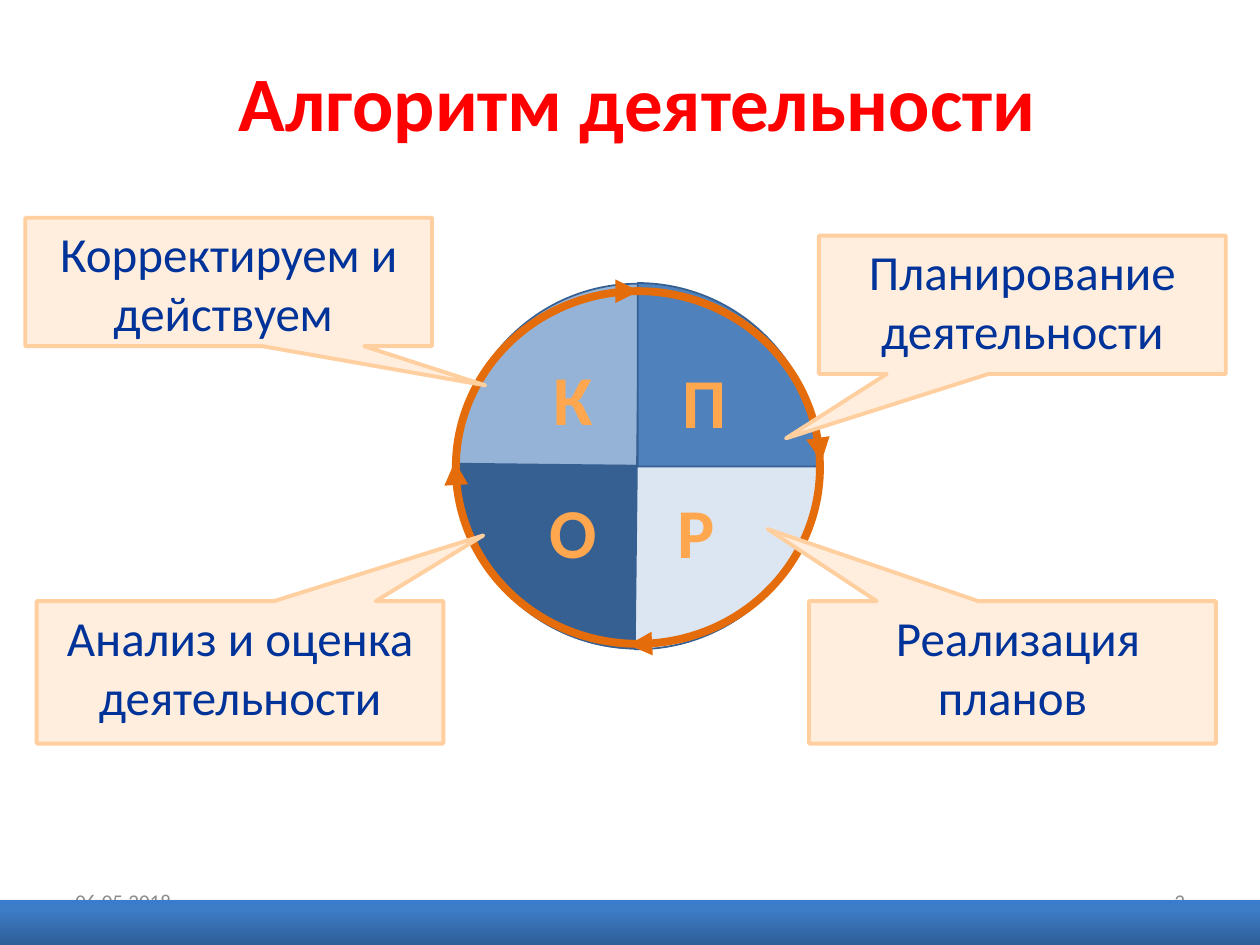
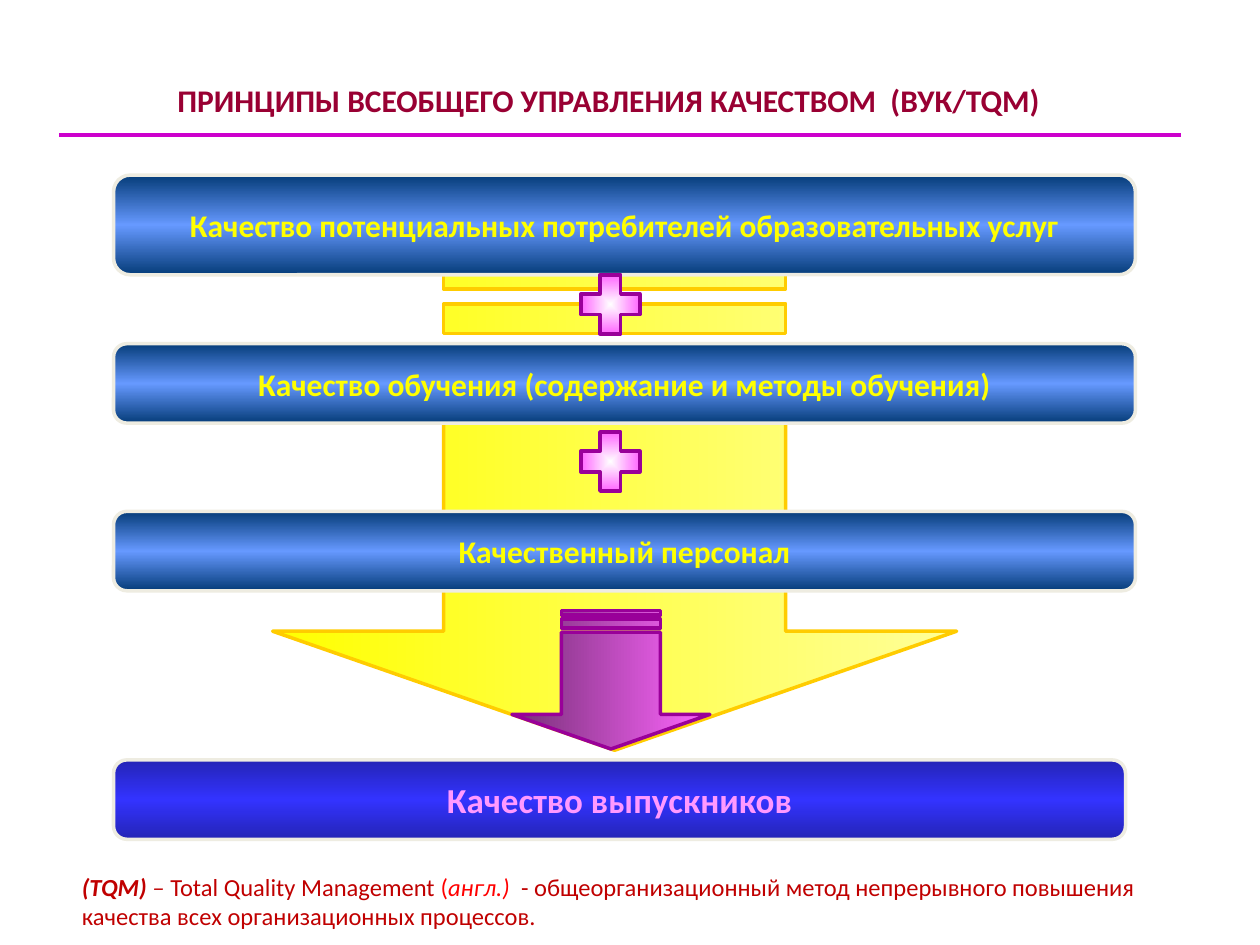
from lxml import etree
from pptx import Presentation, util as u
from pptx.dml.color import RGBColor
from pptx.enum import shapes, text
from pptx.oxml.ns import qn

Cm, Pt = u.Cm, u.Pt
MSO = shapes.MSO_SHAPE
ANCHOR, ALIGN = text.MSO_ANCHOR, text.PP_ALIGN

FONT = "Calibri"
GREY = "8C8C8C"
PIE_LINE, RING = "376092", "E46C0A"
LETTER = "FFA74F"
CALLOUT_FILL, CALLOUT_LINE, CALLOUT_TEXT = "FFEEDD", "FFCF9F", "003399"
BAND_LINE, PURPLE, GOLD = "EEECE1", "990099", "FFCC00"
DARK_RED, RED = "C00000", "FF0000"
BLUE_STOPS = [(0, "053C79"), (50, "6699FF"), (100, "053C79")]
INDIGO_STOPS = [(0, "2424B6"), (50, "3333FF"), (100, "2424B6")]
FOOTER_STOPS = [(0, "2F5F99"), (80, "3D7CC7"), (100, "3A7CCB")]


def color(code):
    return RGBColor.from_string(code)


def sub(parent, tag, **attrs):
    el = etree.SubElement(parent, qn(tag))
    for name, value in attrs.items():
        el.set(name, str(value))
    return el


def gradient(sp, stops, angle=None):
    sp.fill.background()
    props = sp._element.spPr
    old = props.find(qn("a:noFill"))
    grad = etree.Element(qn("a:gradFill"), rotWithShape="1")
    gs_list = sub(grad, "a:gsLst")
    for pos, code in stops:
        sub(sub(gs_list, "a:gs", pos=pos * 1000), "a:srgbClr", val=code)
    if angle is None:
        center = sub(grad, "a:path", path="shape")
        sub(center, "a:fillToRect", l=50000, t=50000, r=50000, b=50000)
    else:
        sub(grad, "a:lin", ang=angle * 60000, scaled=0)
    props.replace(old, grad)


def outline(sp, code, width):
    sp.line.color.rgb = color(code)
    sp.line.width = Pt(width)


def write(sp, runs, size, code, align=ALIGN.LEFT, anchor=ANCHOR.TOP,
          bold=False, wrap=True, after=0):
    tf = sp.text_frame
    tf.word_wrap = wrap
    tf.vertical_anchor = anchor
    p = tf.paragraphs[0]
    p.alignment = align
    p.space_after = Pt(after)
    for words, style in runs:
        r = p.add_run()
        r.text = words
        r.font.name = FONT
        r.font.size = Pt(size)
        r.font.bold = style.get("bold", bold)
        r.font.italic = style.get("italic", False)
        r.font.color.rgb = color(style.get("code", code))
    return tf


def add_text(s, box, words, size, code, **style):
    sp = s.shapes.add_textbox(*map(Cm, box))
    runs = [(words, {})] if isinstance(words, str) else words
    return write(sp, runs, size, code, **style)


def add_shape(s, kind, box, fill=None, line=None, width=1, adj=(), rot=0, angle=None):
    sp = s.shapes.add_shape(kind, *map(Cm, box))
    sp.shadow.inherit = False
    sp.rotation = rot
    for i, value in enumerate(adj):
        sp.adjustments[i] = value
    if isinstance(fill, list):
        gradient(sp, fill, angle)
    elif fill:
        sp.fill.solid()
        sp.fill.fore_color.rgb = color(fill)
    else:
        sp.fill.background()
    if line:
        outline(sp, line, width)
    else:
        sp.line.fill.background()
    return sp


def add_line(s, ends, code, width, arrow=False):
    c = s.shapes.add_connector(shapes.MSO_CONNECTOR.STRAIGHT, *map(Cm, ends))
    outline(c, code, width)
    if arrow:
        sub(c.line._get_or_add_ln(), "a:tailEnd", type="triangle")
    sub(c._element.spPr, "a:effectLst")


def add_callout(s, box, adj, words):
    sp = add_shape(s, MSO.RECTANGULAR_CALLOUT, box, CALLOUT_FILL, CALLOUT_LINE, 2.25, adj)
    write(sp, [(words, {})], 28, CALLOUT_TEXT, align=ALIGN.CENTER, after=10)


def add_band(s, box, words, stops=BLUE_STOPS, size=18, code="FFFF00"):
    sp = add_shape(s, MSO.ROUNDED_RECTANGLE, box, stops, BAND_LINE, 2, angle=90)
    write(sp, [(words, {})], size, code, align=ALIGN.CENTER,
          anchor=ANCHOR.MIDDLE, bold=True, wrap=False)


def add_down_arrow(s, box, stops, line):
    add_shape(s, MSO.STRIPED_RIGHT_ARROW, box, stops, line, 2, (0.5, 0.25), 90, 90)


def add_plus(s, top):
    add_shape(s, MSO.CROSS, (11.71, top, 1.19, 1.19),
              [(0, "FFFFFF"), (100, "FF66FF")], PURPLE, 2, (0.325,))


def add_footer(s, date, number):
    for left, words, align in ((1.27, date, ALIGN.LEFT), (18.21, number, ALIGN.RIGHT)):
        add_text(s, (left, 17.65, 5.93, 1.02), words, 12, GREY,
                 align=align, anchor=ANCHOR.MIDDLE)


def add_footer_bar(s):
    bar = add_shape(s, MSO.RECTANGLE, (0, 18.14, 25.4, 0.91), FOOTER_STOPS, angle=270)
    effects = bar._element.spPr.find(qn("a:effectLst"))
    shadow = sub(effects, "a:outerShdw", blurRad=Pt(3.1), dist=Pt(1.8),
                 dir=90 * 60000, rotWithShape=0)
    sub(sub(shadow, "a:srgbClr", val="000000"), "a:alpha", val=35000)


def cycle_slide(s):
    add_text(s, (2.06, 0.74, 21.59, 2.57), "Алгоритм деятельности", 44, RED,
             align=ALIGN.CENTER, anchor=ANCHOR.MIDDLE, bold=True)
    add_footer(s, "06.05.2018", "3")

    quarter = (0, 54.395)
    for rot, w, h, fill, adj in (
        (180, 7.34, 7.57, "95B3D7", quarter),
        (270, 7.37, 7.34, "4F81BD", ()),
        (90, 7.37, 7.34, "376092", quarter),
        (0, 7.34, 7.37, "DCE6F2", quarter),
    ):
        add_shape(s, MSO.PIE, (9.17, 5.72, w, h), fill, PIE_LINE, 1, adj, rot)

    add_shape(s, MSO.OVAL, (9.19, 5.87, 7.34, 7.11), line=RING, width=4.5)
    for ends in (
        (16.51, 8.97, 16.56, 9.3),
        (9.19, 9.65, 9.17, 9.3),
        (12.55, 5.87, 12.88, 5.87),
        (13.03, 12.98, 12.67, 13),
    ):
        add_line(s, ends, RING, 4.5, arrow=True)

    for letter, left, top in (("П", 13.51, 7.11), ("О", 10.82, 9.73),
                              ("Р", 13.41, 9.73), ("К", 10.9, 7.04)):
        add_text(s, (left, top, 0.97, 1.07), letter, 40, LETTER, bold=True, after=10)

    for left, top, height, adj, words in (
        (0.74, 12.12, 2.87, (0.598, -0.962), "Анализ и оценка деятельности"),
        (16.31, 12.12, 2.87, (-0.602, -1.007), " Реализация планов"),
        (16.51, 4.75, 2.79, (-0.581, 0.965), "Планирование деятельности"),
        (0.51, 4.39, 2.59, (0.631, 0.805), "Корректируем и действуем "),
    ):
        add_callout(s, (left, top, 8.2, height), adj, words)
    add_footer_bar(s)


def principles_slide(s):
    add_down_arrow(s, (7.59, 3.43, 9.6, 13.79), [(0, "FFFF99"), (100, "FFFF00")], GOLD)
    for top, height, words in (
        (3.53, 2.01, "Качество потенциальных потребителей образовательных услуг"),
        (6.93, 1.6, "Качество обучения (содержание и методы обучения)"),
        (10.31, 1.6, "Качественный персонал"),
    ):
        add_band(s, (2.29, top, 20.6, height), words)
    add_band(s, (2.29, 15.32, 20.4, 1.6), "Качество выпускников", INDIGO_STOPS, 20, "FF99FF")
    add_down_arrow(s, (10.92, 11.71, 2.79, 3.99), [(0, "FF66FF"), (100, "762F76")], PURPLE)
    for top in (5.54, 8.71):
        add_plus(s, top)

    add_line(s, (1.19, 2.72, 23.8, 2.72), "CC00CC", 2.25)
    tf = add_text(s, (0.58, 1.32, 23.39, 1.32),
                  "ПРИНЦИПЫ ВСЕОБЩЕГО УПРАВЛЕНИЯ КАЧЕСТВОМ  (ВУК/TQM)", 18, "990033",
                  align=ALIGN.CENTER, anchor=ANCHOR.BOTTOM, bold=True)
    tf.margin_bottom = Cm(0.25)
    add_text(s, (1.4, 17.45, 23.01, 1.45), [
        ("(TQM) ", {"bold": True, "italic": True}),
        ("–", {"italic": True}),
        (" Total Quality Management ", {}),
        ("(", {"code": RED}),
        ("англ.)  ", {"code": RED, "italic": True}),
        ("- общеорганизационный метод непрерывного повышения качества "
         "всех организационных процессов.", {}),
    ], 14, DARK_RED)


def main():
    prs = Presentation()
    prs.slide_width, prs.slide_height = Cm(25.4), Cm(19.05)
    for build in (cycle_slide, principles_slide):
        build(prs.slides.add_slide(prs.slide_layouts[6]))
    prs.save("out.pptx")


if __name__ == "__main__":
    main()
